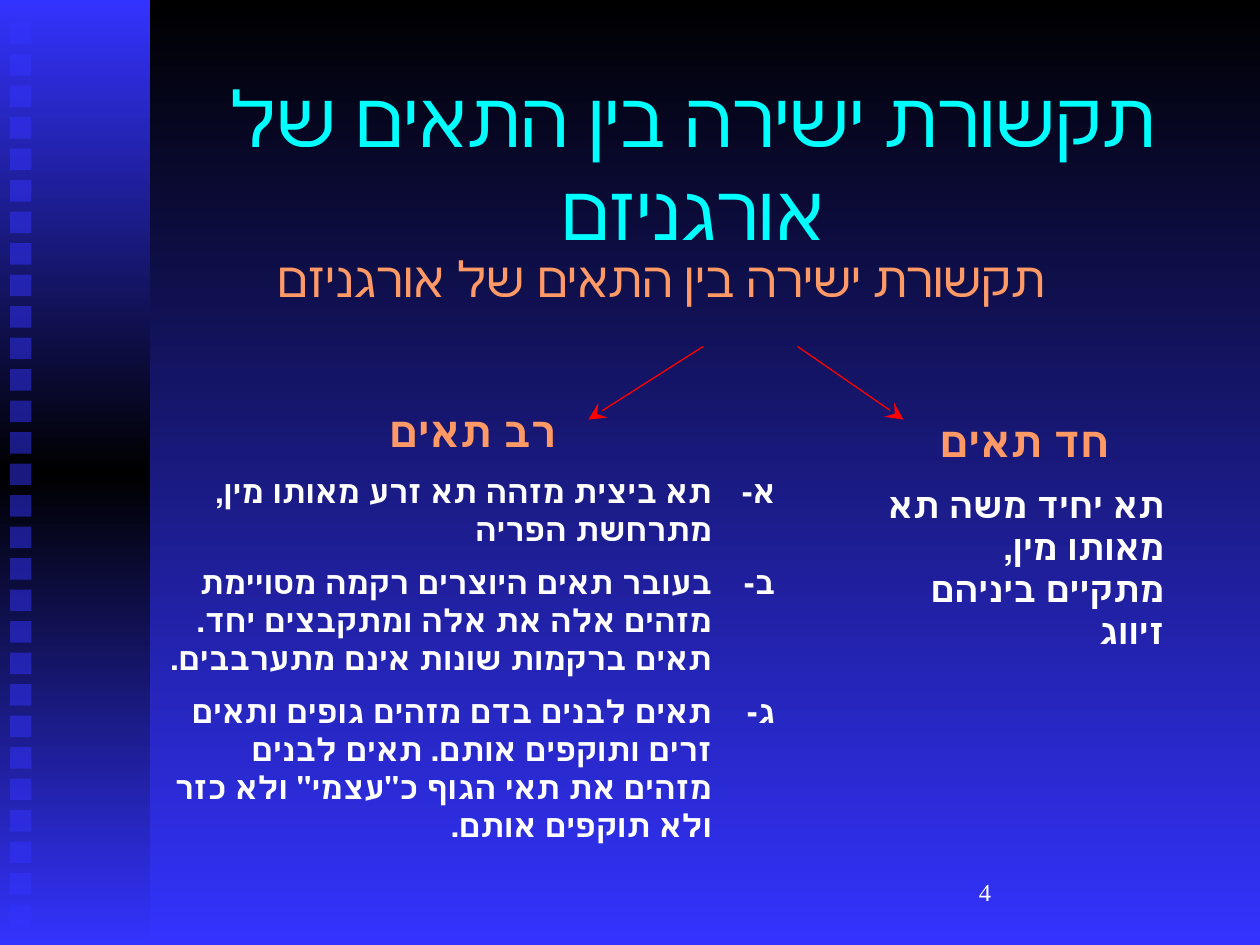
from copy import deepcopy
from dataclasses import dataclass

from lxml import etree
from pptx import Presentation
from pptx.dml.color import RGBColor
from pptx.enum.shapes import MSO_CONNECTOR, MSO_SHAPE
from pptx.enum.text import MSO_ANCHOR, PP_ALIGN
from pptx.oxml.ns import qn
from pptx.util import Inches, Pt

FONT = "Times New Roman"
BLACK, BLUE, WHITE = "000000", "3333FF", "FFFFFF"
CYAN, ORANGE, RED = "00FFFF", "FF9966", "FF0000"
LEFT, CENTER, RIGHT = PP_ALIGN.LEFT, PP_ALIGN.CENTER, PP_ALIGN.RIGHT
TOP, MIDDLE = MSO_ANCHOR.TOP, MSO_ANCHOR.MIDDLE
RECTANGLE, STRAIGHT = MSO_SHAPE.RECTANGLE, MSO_CONNECTOR.STRAIGHT

SQUARE_COUNT, SQUARE_SIZE = 29, 0.17
SQUARE_LEFT, SQUARE_TOP, SQUARE_STEP = 0.08, 0.18, 0.25


@dataclass
class Line:
    text: str
    size: int
    color: str
    bold: bool = False
    align: PP_ALIGN = CENTER
    right_to_left: bool = True
    space_before: int = 0  # percent of the line
    margin: float = 0
    indent: float = 0
    numbering: str = ""


@dataclass
class TextBlock:
    left: float
    top: float
    width: float
    height: float
    lines: list[Line]
    anchor: MSO_ANCHOR = TOP


@dataclass
class Arrow:
    start: tuple[float, float]
    end: tuple[float, float]


def heading(text: str, **layout) -> Line:
    return Line(text, 24, ORANGE, bold=True, space_before=50, **layout)


def detail(text: str, size: int, **layout) -> Line:
    return Line(text, size, WHITE, bold=True, align=RIGHT, space_before=50, **layout)


HANGING = {"margin": 0.5, "indent": -0.5}
NUMBERED = {**HANGING, "numbering": "hebrew2Minus"}
TITLE = "תקשורת ישירה בין התאים של אורגניזם"

TEXT_BLOCKS = [
    TextBlock(1.25, 0.67, 8.5, 1.25, [Line(TITLE, 44, CYAN)], MIDDLE),
    TextBlock(7.67, 6.83, 2.08, 0.5,
              [Line("4", 14, WHITE, align=LEFT, right_to_left=False)], MIDDLE),
    TextBlock(1.25, 1.92, 8.5, 5,
              [Line(TITLE, 28, ORANGE, space_before=20, margin=0.81, indent=-0.31)]),
    TextBlock(6.92, 3.25, 2.42, 1.67, [
        heading("חד תאים"),
        detail("תא יחיד משה תא מאותו מין, מתקיים ביניהם זיווג", 20),
    ]),
    TextBlock(1.25, 3.17, 5, 3.81, [
        heading("רב תאים", **HANGING),
        detail("תא ביצית מזהה תא זרע מאותו מין, מתרחשת הפריה", 18, **NUMBERED),
        detail("בעובר תאים היוצרים רקמה מסויימת מזהים אלה את אלה ומתקבצים יחד. "
               "תאים ברקמות שונות אינם מתערבבים.", 18, **NUMBERED),
        detail("תאים לבנים בדם מזהים גופים ותאים זרים ותוקפים אותם. "
               "תאים לבנים מזהים את תאי הגוף כ\"עצמי\" ולא כזר ולא תוקפים אותם.",
               18, **NUMBERED),
    ]),
]

ARROWS = [Arrow((6.33, 2.75), (7.17, 3.33)), Arrow((5.58, 2.75), (4.67, 3.33))]


def rgb(color: str) -> RGBColor:
    return RGBColor.from_string(color)


def set_gradient(fill, element, colors: list[str]) -> None:
    """Fill downwards with evenly spaced colours; element holds the fill."""
    fill.gradient()
    fill.gradient_angle = 270
    stop_list = element.find(".//" + qn("a:gsLst"))
    while len(stop_list) < len(colors):
        stop_list.append(deepcopy(stop_list[-1]))
    for index, (stop, color) in enumerate(zip(fill.gradient_stops, colors)):
        stop.position = index / (len(colors) - 1)
        stop.color.rgb = rgb(color)


def add_rectangle(slide, left: float, top: float, width: float, height: float):
    shape = slide.shapes.add_shape(
        RECTANGLE, Inches(left), Inches(top), Inches(width), Inches(height))
    shape.shadow.inherit = False
    shape.line.fill.background()
    return shape


def add_square(slide, top: float) -> None:
    square = add_rectangle(slide, SQUARE_LEFT, top, SQUARE_SIZE, SQUARE_SIZE)
    square.fill.solid()
    square.fill.fore_color.rgb = rgb(BLUE)
    color = square._element.spPr.find(".//" + qn("a:srgbClr"))
    etree.SubElement(color, qn("a:alpha"), val="50000")


def format_paragraph(paragraph, line: Line) -> None:
    paragraph.text = line.text
    paragraph.alignment = line.align
    properties = paragraph._p.get_or_add_pPr()
    properties.set("marL", str(Inches(line.margin)))
    properties.set("indent", str(Inches(line.indent)))
    properties.set("rtl", str(int(line.right_to_left)))
    if line.space_before:
        spacing = etree.SubElement(properties, qn("a:spcBef"))
        etree.SubElement(spacing, qn("a:spcPct"), val=str(line.space_before * 1000))
    if line.numbering:
        etree.SubElement(properties, qn("a:buAutoNum"), type=line.numbering)
    for run in paragraph.runs:
        run.font.name = FONT
        run.font.size = Pt(line.size)
        run.font.bold = line.bold
        run.font.color.rgb = rgb(line.color)


def add_text_block(slide, block: TextBlock) -> None:
    shape = slide.shapes.add_textbox(
        Inches(block.left), Inches(block.top), Inches(block.width), Inches(block.height))
    text_frame = shape.text_frame
    text_frame.word_wrap = True
    text_frame.vertical_anchor = block.anchor
    for index, line in enumerate(block.lines):
        paragraph = text_frame.add_paragraph() if index else text_frame.paragraphs[0]
        format_paragraph(paragraph, line)


def add_arrow(slide, arrow: Arrow) -> None:
    points = [Inches(value) for value in arrow.start + arrow.end]
    connector = slide.shapes.add_connector(STRAIGHT, *points)
    connector.line.color.rgb = rgb(RED)
    connector.line.width = Pt(0.75)
    etree.SubElement(connector.line._get_or_add_ln(), qn("a:tailEnd"), type="stealth",
                     w="lg", len="lg")
    etree.SubElement(connector._element.spPr, qn("a:effectLst"))


def main() -> None:
    presentation = Presentation()
    presentation.slide_width = Inches(10)
    presentation.slide_height = Inches(7.5)
    slide = presentation.slides.add_slide(presentation.slide_layouts[6])
    set_gradient(slide.background.fill, slide._element, [BLACK, BLUE])

    side_band = add_rectangle(slide, 0, 0, 1.19, 7.5)
    set_gradient(side_band.fill, side_band._element, [BLUE, BLACK, BLUE])
    for index in range(SQUARE_COUNT):
        add_square(slide, SQUARE_TOP + index * SQUARE_STEP)

    for block in TEXT_BLOCKS:
        add_text_block(slide, block)
    for arrow in ARROWS:
        add_arrow(slide, arrow)
    presentation.save("out.pptx")


if __name__ == "__main__":
    main()
